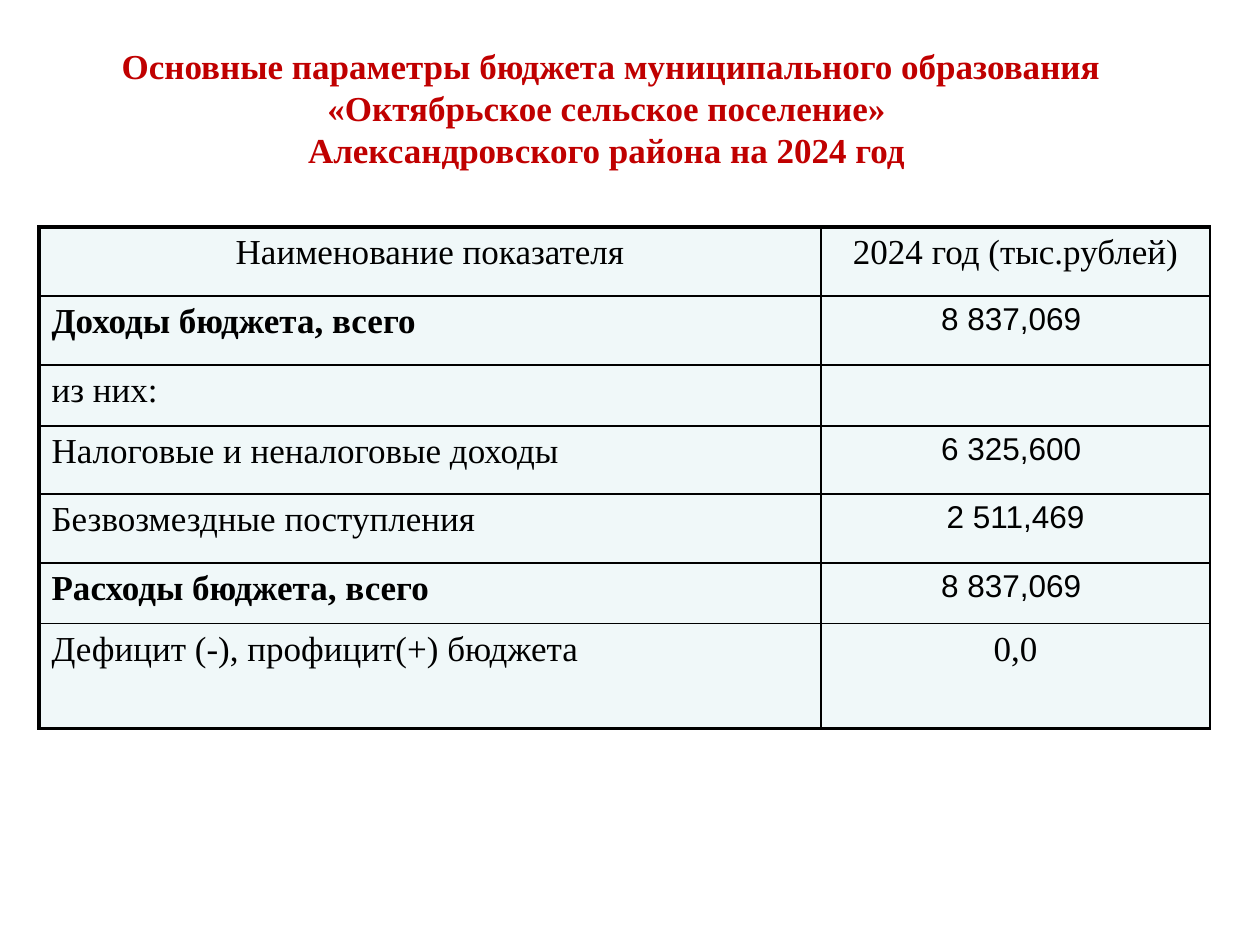
from dataclasses import dataclass

from lxml import etree
from pptx import Presentation, util as u
from pptx.dml.color import RGBColor
from pptx.enum import text
from pptx.oxml.ns import qn

# Content
TITLE = [
    "Основные параметры бюджета муниципального образования «Октябрьское сельское поселение» ",
    "Александровского района на 2024 год ",
]
# label, value, bold label, value set as a figure, row height in px
ROWS = [
    ("Наименование показателя", "2024 год (тыс.рублей)", False, False, 69),
    ("Доходы бюджета, всего", "8\u00a0837,069 ", True, True, 69),
    ("из них:", "", False, False, 61),
    ("Налоговые и неналоговые доходы", "6\u00a0325,600 ", False, True, 68),
    ("Безвозмездные поступления", "2 511,469", False, True, 69),
    ("Расходы бюджета, всего", "8\u00a0837,069 ", True, True, 61),
    ("Дефицит (-), профицит(+) бюджета", "0,0", False, False, 105),
]
COLUMNS = [782, 389]
TITLE_AREA = (20, 38, 1182, 140)
TABLE_CORNER = (39, 227)


@dataclass(frozen=True)
class Theme:
    title: str = "C00000"
    ink: str = "000000"
    cell: str = "F0F8F9"
    serif: str = "Times New Roman"
    sans: str = "Arial"
    body_size: int = 20
    figure_size: int = 18
    thin: float = 1
    thick: float = 2.25


THEME = Theme()


def px(length):
    return u.Emu(round(length * 914400 / 126))


def add_span(para, words, font, size, color, bold=False):
    span = para.add_run()
    span.text = words
    span.font.name = font
    span.font.size = u.Pt(size)
    span.font.bold = bold
    span.font.color.rgb = RGBColor.from_string(color)


def set_borders(cell, left, right, top, bottom):
    properties = cell._tc.get_or_add_tcPr()
    for side, width in zip("LRTB", (left, right, top, bottom)):
        line = etree.SubElement(properties, qn(f"a:ln{side}"), w=str(u.Pt(width)))
        fill = etree.SubElement(line, qn("a:solidFill"))
        etree.SubElement(fill, qn("a:srgbClr"), val=THEME.ink)


def add_title(page):
    box = page.shapes.add_textbox(*map(px, TITLE_AREA))
    frame = box.text_frame
    frame.word_wrap = True
    frame.vertical_anchor = text.MSO_ANCHOR.MIDDLE
    para = frame.paragraphs[0]
    para.alignment = text.PP_ALIGN.CENTER
    for index, words in enumerate(TITLE):
        if index:
            para.add_line_break()
        add_span(para, words, THEME.serif, THEME.body_size, THEME.title, True)


def add_budget_table(page):
    heights = [row[-1] for row in ROWS]
    area = (*TABLE_CORNER, sum(COLUMNS), sum(heights))
    table = page.shapes.add_table(len(ROWS), len(COLUMNS), *map(px, area)).table
    table.first_row = table.horz_banding = False
    for column, width in zip(table.columns, COLUMNS):
        column.width = px(width)

    last = len(ROWS) - 1
    for r, (label, value, bold, figure, height) in enumerate(ROWS):
        table.rows[r].height = px(height)
        for c, words in enumerate((label, value)):
            cell = table.cell(r, c)
            # Heavy outline on the left, top and bottom
            set_borders(
                cell,
                left=THEME.thin if c else THEME.thick,
                right=THEME.thin,
                top=THEME.thin if r else THEME.thick,
                bottom=THEME.thick if r == last else THEME.thin,
            )
            cell.fill.solid()
            cell.fill.fore_color.rgb = RGBColor.from_string(THEME.cell)
            para = cell.text_frame.paragraphs[0]
            centred = c == 1 or r == 0
            para.alignment = text.PP_ALIGN.CENTER if centred else text.PP_ALIGN.LEFT
            if not words:
                continue
            if c == 1 and figure:
                add_span(para, words, THEME.sans, THEME.figure_size, THEME.ink)
            else:
                add_span(para, words, THEME.serif, THEME.body_size, THEME.ink, bold and c == 0)


def main():
    deck = Presentation()
    deck.slide_width, deck.slide_height = px(1260), px(945)
    page = deck.slides.add_slide(deck.slide_layouts[6])
    add_title(page)
    add_budget_table(page)
    deck.save("out.pptx")


if __name__ == "__main__":
    main()
